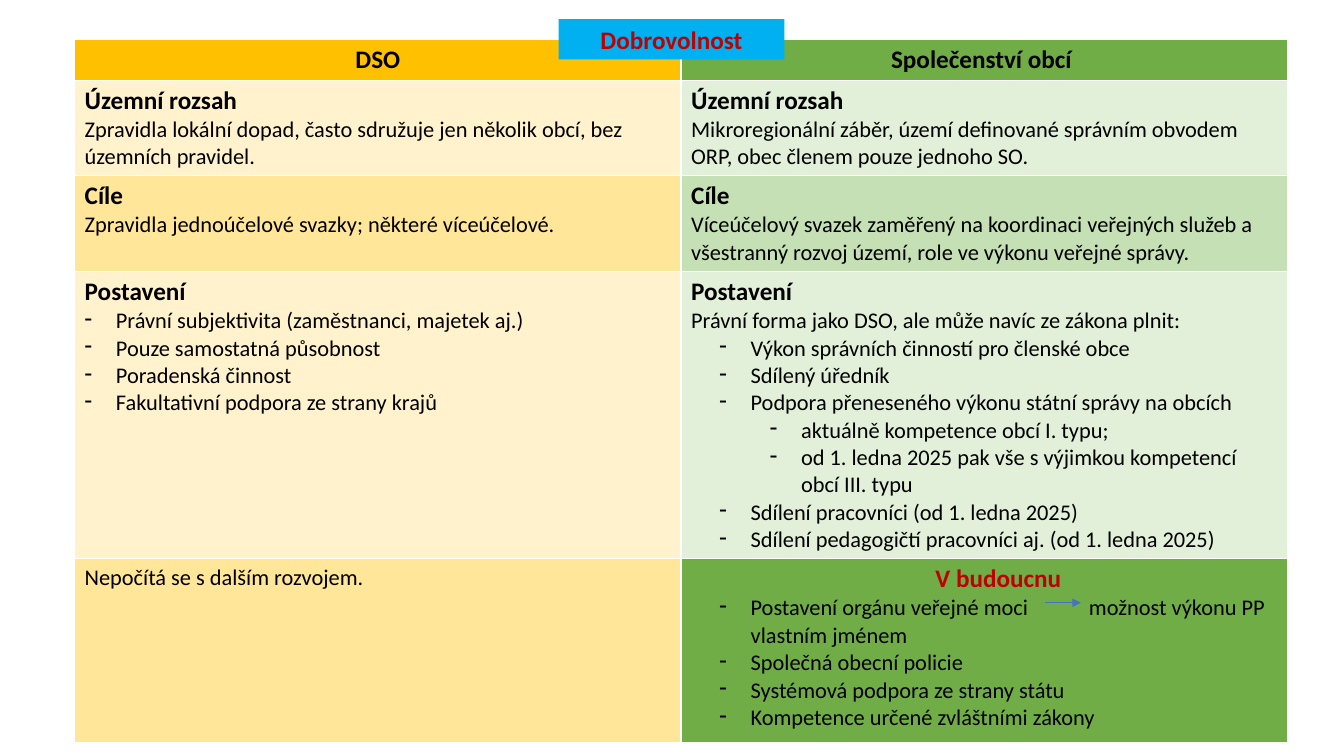
from dataclasses import dataclass

from lxml import etree
from pptx import Presentation
from pptx import util as u
from pptx.dml import color
from pptx.enum import shapes, text
from pptx.oxml import ns

HUES = {
    "amber": "FFC000", "cream": "FFF2CC", "sand": "FFE699",
    "green": "70AD47", "mint": "E2F0D9", "sage": "C5E0B4",
    "sky": "00B0F0", "blue": "4472C4", "red": "C00000", "black": "000000",
}
FONT = "Calibri"
GAP = "3980"


@dataclass
class Para:
    words: str
    size: int = 16
    bold: bool = False
    hue: str = "black"
    center: bool = False
    left: float = 0
    dash: bool = False
    level: int = 0


@dataclass
class Box:
    hue: str
    paras: list[Para]


def head(words: str, **kind) -> Para:
    return Para(words, 18, True, **kind)


def dashes(left: float, *lines: str, level: int = 0) -> list[Para]:
    return [Para(line, left=left, dash=True, level=level) for line in lines]


def tint(name: str) -> color.RGBColor:
    return color.RGBColor.from_string(HUES[name])


def paint(fill, name: str) -> None:
    fill.solid()
    fill.fore_color.rgb = tint(name)


def write(frame, paras: list[Para]) -> None:
    frame.text = "\n".join(para.words for para in paras)
    for line, para in zip(frame.paragraphs, paras):
        line.level = para.level
        if para.center:
            line.alignment = text.PP_ALIGN.CENTER
        props = line._p.get_or_add_pPr()
        if para.left:
            props.set("marL", str(u.Inches(para.left)))
            props.set("indent", str(u.Inches(-0.31 if para.dash else 0)))
        if para.dash:
            etree.SubElement(props, ns.qn("a:buChar"), char="-")
        for run in line.runs:
            style(run, para)


def style(run, para: Para) -> None:
    run.font.name = FONT
    run.font.size = u.Pt(para.size)
    run.font.bold = para.bold
    run.font.color.rgb = tint(para.hue)


def split(line, para: Para, before: str, after: str) -> None:
    line.runs[0].text = before
    for words in (" ", after):
        run = line.add_run()
        run.text = words
        style(run, para)
    line.runs[1]._r.get_or_add_rPr().set("spc", GAP)


ROWS = [
    (0.38, Box("amber", [head("DSO", center=True)]),
     Box("green", [head("Společenství obcí ", center=True)])),
    (0.9, Box("cream", [
        head("Územní rozsah"),
        Para("Zpravidla lokální dopad, často sdružuje jen několik obcí, bez územních pravidel."),
    ]), Box("mint", [
        head("Územní rozsah"),
        Para("Mikroregionální záběr, území definované správním obvodem ORP, obec členem pouze jednoho SO."),
    ])),
    (0.9, Box("sand", [
        head("Cíle"),
        Para("Zpravidla jednoúčelové svazky; některé víceúčelové."),
    ]), Box("sage", [
        head("Cíle"),
        Para("Víceúčelový svazek zaměřený na koordinaci veřejných služeb a všestranný rozvoj území, "
             "role ve výkonu veřejné správy."),
    ])),
    (2.69, Box("cream", [
        head("Postavení"),
        *dashes(0.31, "Právní subjektivita (zaměstnanci, majetek aj.)",
                "Pouze samostatná působnost", "Poradenská činnost",
                "Fakultativní podpora ze strany krajů"),
    ]), Box("mint", [
        head("Postavení"),
        Para("Právní forma jako DSO, ale může navíc ze zákona plnit:"),
        *dashes(0.59, "Výkon správních činností pro členské obce", "Sdílený úředník",
                "Podpora přeneseného výkonu státní správy na obcích"),
        *dashes(1.09, "aktuálně kompetence obcí I. typu;",
                "od 1. ledna 2025 pak vše s výjimkou kompetencí obcí III. typu", level=1),
        *dashes(0.59, "Sdílení pracovníci (od 1. ledna 2025)",
                "Sdílení pedagogičtí pracovníci aj. (od 1. ledna 2025)"),
    ])),
    (1.82, Box("sand", [Para("Nepočítá se s dalším rozvojem.")]),
     Box("green", [
         head("V budoucnu", hue="red", center=True, left=0.28),
         *dashes(0.59, "Postavení orgánu veřejné moci možnost výkonu PP vlastním jménem",
                 "Společná obecní policie", "Systémová podpora ze strany státu",
                 "Kompetence určené zvláštními zákony"),
     ])),
]


def add_grid(slide) -> None:
    high = sum(row[0] for row in ROWS)
    grid = slide.shapes.add_table(len(ROWS), 2, u.Inches(0.74), u.Inches(0.39),
                                  u.Inches(12.03), u.Inches(high)).table
    for i, (tall, *boxes) in enumerate(ROWS):
        grid.rows[i].height = u.Inches(tall)
        for j, box in enumerate(boxes):
            cell = grid.cell(i, j)
            paint(cell.fill, box.hue)
            write(cell.text_frame, box.paras)
    future = ROWS[-1][2].paras
    split(grid.cell(4, 1).text_frame.paragraphs[1], future[1],
          "Postavení orgánu veřejné moci", "možnost výkonu PP vlastním jménem")


def add_arrow(slide) -> None:
    arrow = slide.shapes.add_connector(
        shapes.MSO_CONNECTOR.STRAIGHT, u.Inches(10.36), u.Inches(5.98),
        u.Inches(10.72), u.Inches(5.98))
    arrow.line.color.rgb = tint("blue")
    arrow.line.width = u.Pt(0.5)
    etree.SubElement(arrow.line._get_or_add_ln(), ns.qn("a:tailEnd"), type="triangle")
    etree.SubElement(arrow._element.spPr, ns.qn("a:effectLst"))


def add_label(slide) -> None:
    label = slide.shapes.add_shape(
        shapes.MSO_SHAPE.RECTANGLE, u.Inches(5.54), u.Inches(0.19),
        u.Inches(2.24), u.Inches(0.4))
    label.shadow.inherit = False
    label.line.fill.background()
    paint(label.fill, "sky")
    write(label.text_frame, [head("Dobrovolnost", hue="red", center=True)])


def main() -> None:
    deck = Presentation()
    deck.slide_width = u.Inches(13.33)
    deck.slide_height = u.Inches(7.5)
    slide = deck.slides.add_slide(deck.slide_layouts[6])
    add_grid(slide)
    add_arrow(slide)
    add_label(slide)
    deck.save("out.pptx")


if __name__ == "__main__":
    main()
